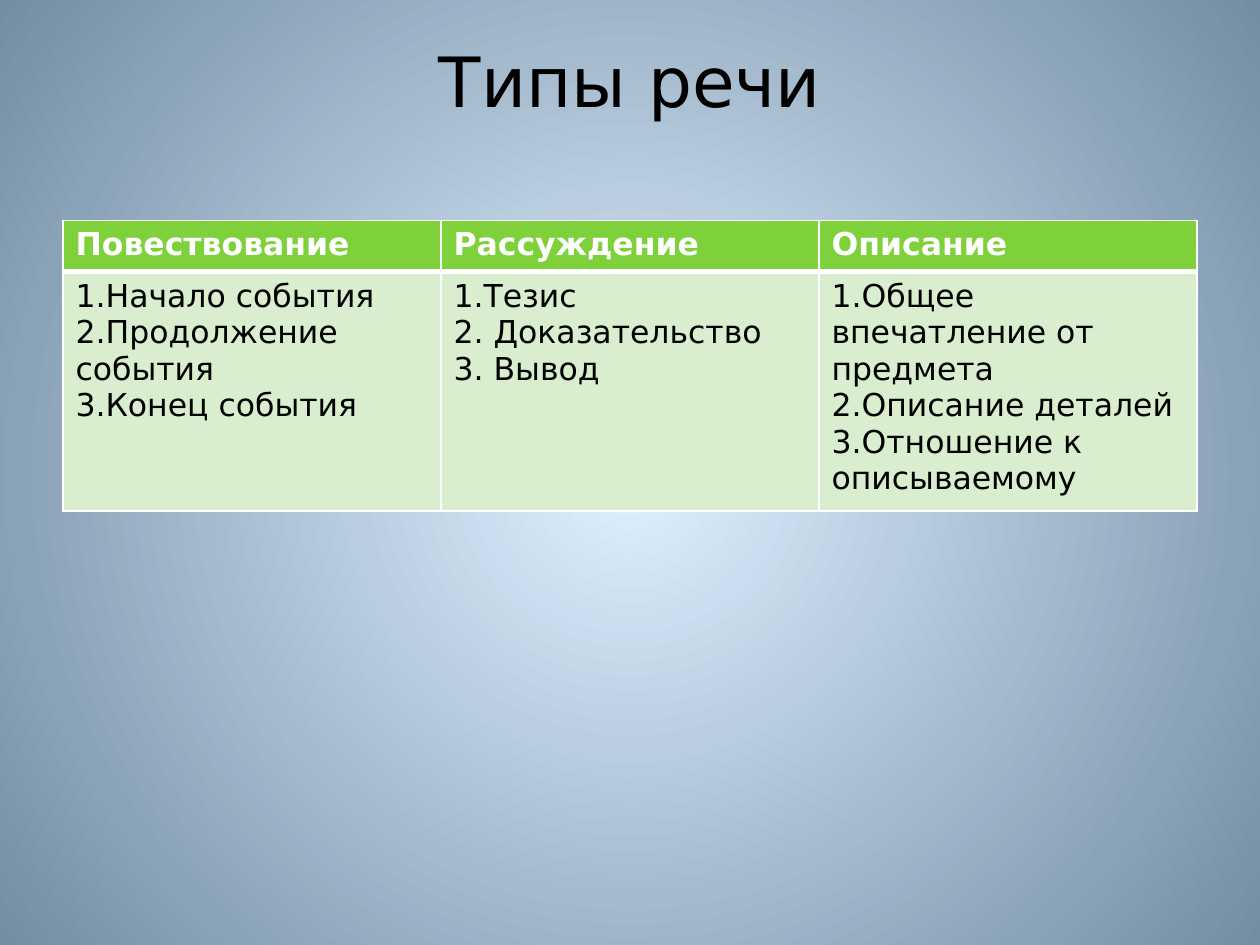
from pptx import Presentation
from pptx.dml.color import RGBColor as RGB
from pptx.enum.text import MSO_ANCHOR as Anchor, PP_ALIGN as Align
from pptx.oxml import parse_xml
from pptx.oxml.ns import nsdecls
from pptx.util import Pt

FONT = "DejaVu Sans"
HUES = {
    "ink": "000000",
    "white": "FFFFFF",
    "head": "7FD13B",
    "body": "D8EECE",
    "glow": "DFF0FF",
    "edge": "738DA3",
}
TYPES = {
    "Повествование": [
        "1.Начало события", "2.Продолжение события", "3.Конец события"],
    "Рассуждение": ["1.Тезис", "2. Доказательство", "3. Вывод"],
    "Описание": [
        "1.Общее впечатление от предмета", "2.Описание деталей",
        "3.Отношение к описываемому"],
}


def put_text(frame, lines, size=18, hue="ink", bold=False, align=Align.LEFT):
    frame.word_wrap = True
    for i, line in enumerate(lines):
        para = frame.paragraphs[0] if i == 0 else frame.add_paragraph()
        para.alignment = align
        run = para.add_run()
        run.text = line
        font = run.font
        font.name, font.size, font.bold = FONT, Pt(size), bold
        font.color.rgb = RGB.from_string(HUES[hue])


def add_glow(slide):
    """Fill the background with a gradient that spreads from the centre."""
    stops = "".join(
        f'<a:gs pos="{pos}"><a:srgbClr val="{HUES[hue]}"/></a:gs>'
        for pos, hue in ((0, "glow"), (100000, "edge")))
    slide.element.cSld.insert(0, parse_xml(
        f'<p:bg {nsdecls("p", "a")}><p:bgPr><a:gradFill rotWithShape="1">'
        f'<a:gsLst>{stops}</a:gsLst><a:path path="circle">'
        '<a:fillToRect l="50000" t="50000" r="50000" b="50000"/></a:path>'
        '</a:gradFill><a:effectLst/></p:bgPr></p:bg>'))


def add_title(slide, text):
    box = slide.shapes.add_textbox(Pt(36), Pt(21.6), Pt(648), Pt(90))
    frame = box.text_frame
    frame.margin_top = 0
    frame.vertical_anchor = Anchor.TOP
    put_text(frame, [text], size=39.6, align=Align.CENTER)


def set_edges(cell, **widths):
    props = cell._tc.get_or_add_tcPr()
    for side in "LRTB":
        width = Pt(widths.get(side, 1))
        props.append(parse_xml(
            f'<a:ln{side} {nsdecls("a")} w="{width}"><a:solidFill>'
            f'<a:srgbClr val="{HUES["white"]}"/></a:solidFill></a:ln{side}>'))


def fill_cell(cell, lines, back, edges, **style):
    set_edges(cell, **edges)
    cell.fill.solid()
    cell.fill.fore_color.rgb = RGB.from_string(HUES[back])
    put_text(cell.text_frame, lines, **style)


def add_grid(slide, types):
    heights = (29.2, 133)
    grid = slide.shapes.add_table(
        2, len(types), Pt(36), Pt(126), Pt(648), Pt(sum(heights))).table
    for row, height in zip(grid.rows, heights):
        row.height = Pt(height)
    for col, (name, steps) in enumerate(types.items()):
        # A thick rule parts the heading from the steps
        fill_cell(grid.cell(0, col), [name], "head", {"B": 3},
                  hue="white", bold=True)
        fill_cell(grid.cell(1, col), steps, "body", {"T": 3})


def main():
    deck = Presentation()
    deck.slide_width, deck.slide_height = Pt(720), Pt(540)
    slide = deck.slides.add_slide(deck.slide_layouts[6])
    add_glow(slide)
    add_title(slide, "Типы речи")
    add_grid(slide, TYPES)
    deck.save("out.pptx")


if __name__ == "__main__":
    main()
